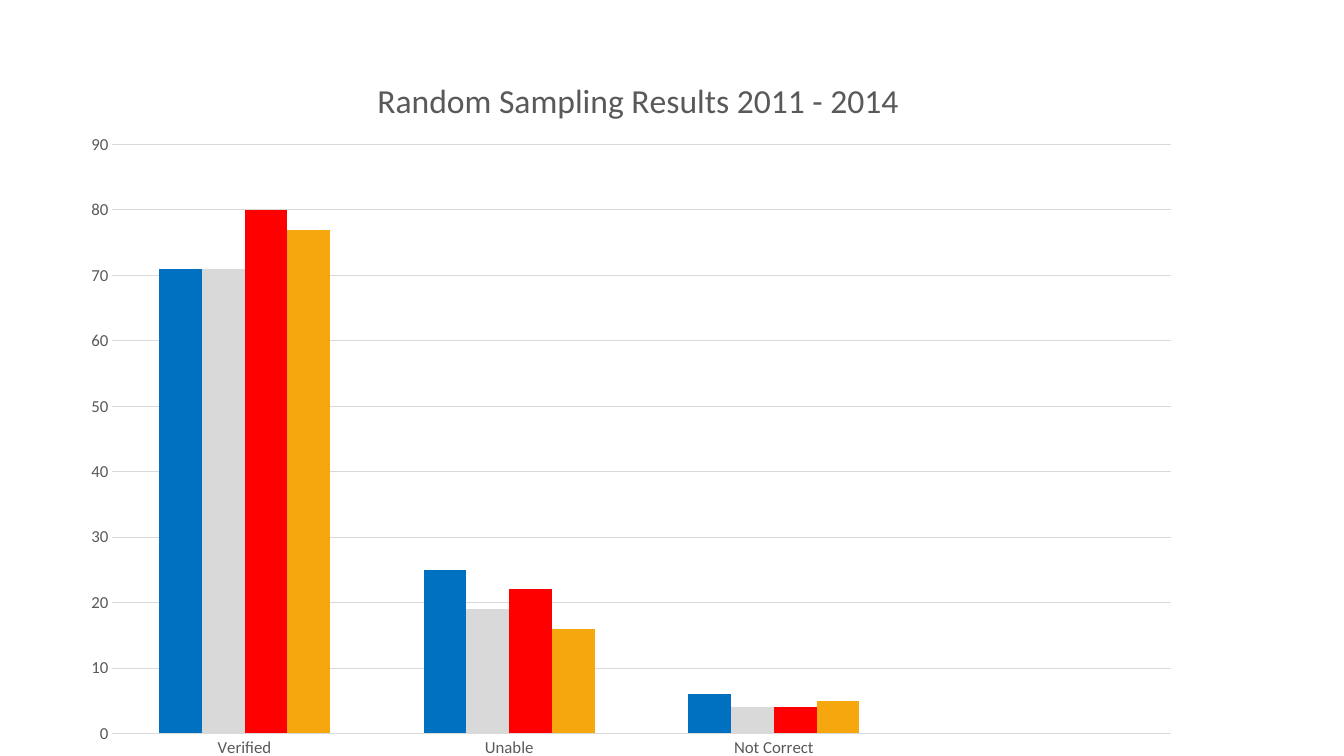
from dataclasses import dataclass
from typing import Optional

from lxml.etree import SubElement
from pptx import Presentation
from pptx.chart.axis import CategoryAxis as CatAxis, ValueAxis as ValAxis
from pptx.chart.chart import Chart
from pptx.chart.data import CategoryChartData as Data
from pptx.dml.color import RGBColor as Color
from pptx.dml.line import LineFormat as Line
from pptx.enum.chart import XL_CHART_TYPE as Kind, XL_TICK_MARK as Tick
from pptx.oxml.ns import qn
from pptx.text.text import Font
from pptx.util import Inches, Pt


@dataclass(frozen=True)
class Theme:
    ink: str = "595959"
    base: str = "000000"
    rule: str = "D9D9D9"
    face: str = "Calibri"
    alt: str = "Cabin"
    head: float = 24
    tick: float = 12
    small: float = 10
    thin: float = 0.75


@dataclass(frozen=True)
class Group:
    name: str
    vals: tuple[Optional[float], ...]
    fill: str


@dataclass(frozen=True)
class Area:
    x: float
    y: float
    w: float
    h: float


LOOK = Theme()
WIDE, HIGH = Inches(13.33), Inches(7.5)
FRAME = Area(x=0.05, y=0.067, w=0.838, h=0.956)
PLOT = {"x": 0.04, "y": 0.13, "w": 0.94, "h": 0.815}
HEAD = {"x": 0.27, "y": 0.03}
TITLE = "Random Sampling Results 2011 - 2014"
CATS = ("Verified", "Unable", "Not Correct", "")
GROUPS = (
    Group("Series 1", (71, 25, 6, None), "0070C0"),
    Group("Series 2", (71, 19, 4, None), "D9D9D9"),
    Group("Series 3", (80, 22, 4, None), "FF0000"),
    Group("Series 4", (77, 16, 5, None), "F5A70D"),
)


def set_font(font: Font, face: str, size: float, ink: str) -> None:
    font.name = face
    font.size = Pt(size)
    font.bold = False
    font.color.rgb = Color.from_string(ink)


def set_line(line: Line) -> None:
    line.color.rgb = Color.from_string(LOOK.rule)
    line.width = Pt(LOOK.thin)


def place(chart: Chart, tag: str, spot: dict[str, float]) -> None:
    host = chart.element.find(f"{qn('c:chart')}/{qn(tag)}")
    node = host.find(qn("c:layout"))
    if node is None:
        node = SubElement(host, qn("c:layout"))
        host.insert(0, node)
    box = SubElement(node, qn("c:manualLayout"))
    if "w" in spot:
        SubElement(box, qn("c:layoutTarget")).set("val", "inner")
    for key in ("x", "y"):
        SubElement(box, qn(f"c:{key}Mode")).set("val", "edge")
    for key, share in spot.items():
        SubElement(box, qn(f"c:{key}")).set("val", str(share))


def style_axis(axis: CatAxis | ValAxis) -> None:
    axis.major_tick_mark = axis.minor_tick_mark = Tick.NONE
    set_font(axis.tick_labels.font, LOOK.face, LOOK.tick, LOOK.ink)


def add_bars(deck: Presentation) -> Chart:
    slide = deck.slides.add_slide(deck.slide_layouts[6])
    data = Data()
    data.categories = CATS
    for group in GROUPS:
        data.add_series(group.name, group.vals)
    return slide.shapes.add_chart(
        Kind.COLUMN_CLUSTERED,
        int(WIDE * FRAME.x), int(HIGH * FRAME.y),
        int(WIDE * FRAME.w), int(HIGH * FRAME.h), data,
    ).chart


def style_bars(chart: Chart) -> None:
    set_font(chart.font, LOOK.alt, LOOK.small, LOOK.base)
    chart.has_legend = False
    bars = chart.plots[0]
    bars.gap_width = 219
    bars.vary_by_categories = False
    for group, item in zip(GROUPS, bars.series):
        item.format.fill.solid()
        item.format.fill.fore_color.rgb = Color.from_string(group.fill)

    cats, vals = chart.category_axis, chart.value_axis
    style_axis(cats)
    style_axis(vals)
    set_line(cats.format.line)
    vals.format.line.fill.background()
    vals.minimum_scale, vals.maximum_scale, vals.major_unit = 0, 90, 10
    vals.has_major_gridlines = True
    set_line(vals.major_gridlines.format.line)

    run = chart.chart_title.text_frame.paragraphs[0].add_run()
    run.text = TITLE
    set_font(run.font, LOOK.face, LOOK.head, LOOK.ink)
    place(chart, "c:title", HEAD)
    place(chart, "c:plotArea", PLOT)


def main() -> None:
    deck = Presentation()
    deck.slide_width, deck.slide_height = WIDE, HIGH
    style_bars(add_bars(deck))
    deck.save("out.pptx")


if __name__ == "__main__":
    main()
